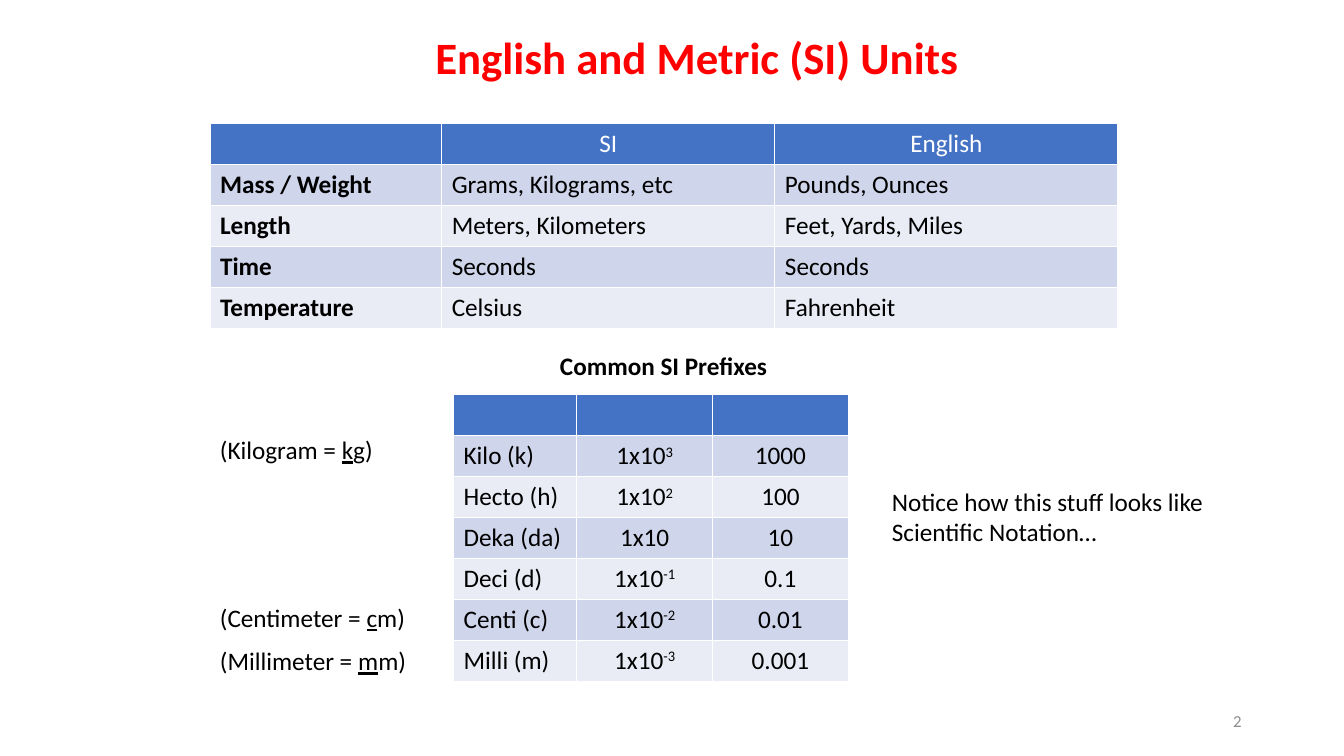
"""Build a slide comparing English and metric units, with the SI prefixes."""
from pptx import Presentation
from pptx.dml.color import RGBColor
from pptx.enum import text as t
from pptx.util import Pt

LEFT, MID, RIGHT = t.PP_ALIGN.LEFT, t.PP_ALIGN.CENTER, t.PP_ALIGN.RIGHT


def write(frame, words, align=LEFT, size=18, color="000000", bold=False):
    """Fill a frame; text between bars is underlined, between carets raised."""
    para = frame.paragraphs[0]
    para.alignment = align
    font = para.font
    font.name, font.size, font.bold = "Calibri", Pt(size), bold
    font.color.rgb = RGBColor.from_string(color)
    mark = "^" if "^" in words else "|"
    for i, part in enumerate(words.split(mark)):
        if part:
            run = para.add_run()
            run.text = part
            if i % 2 and mark == "|":
                run.font.underline = True
            elif i % 2:
                run.font._element.set("baseline", "30000")


def grid(rows, left, top, widths, aligns, lead):
    """Add a banded table with a blue header row."""
    high = 29.25
    table = slide.shapes.add_table(
        len(rows), len(widths), Pt(left), Pt(top),
        Pt(sum(widths)), Pt(high * len(rows))).table
    for col, width in zip(table.columns, widths):
        col.width = Pt(width)
    for r, row in enumerate(rows):
        table.rows[r].height = Pt(high)
        fill = "4472C4" if r == 0 else "CFD5EA" if r % 2 else "E9EBF5"
        for c, words in enumerate(row):
            cell = table.cell(r, c)
            cell.fill.solid()
            cell.fill.fore_color.rgb = RGBColor.from_string(fill)
            write(cell.text_frame, words, aligns[c] if r else MID,
                  color="000000" if r else "FFFFFF",
                  bold=lead and r > 0 and c == 0)


prs = Presentation()
prs.slide_width, prs.slide_height = Pt(960), Pt(540)
slide = prs.slides.add_slide(prs.slide_layouts[5])

title = slide.shapes.title
title.left, title.top, title.width, title.height = Pt(174), Pt(17.5), Pt(648), Pt(50)
title.text_frame.vertical_anchor = t.MSO_ANCHOR.MIDDLE
title.text_frame.paragraphs[0].line_spacing = 0.9
write(title.text_frame, "English and Metric (SI) Units", MID, 32, "FF0000", True)

units = [
    ("", "SI", "English"),
    ("Mass / Weight", "Grams, Kilograms, etc", "Pounds, Ounces"),
    ("Length", "Meters, Kilometers", "Feet, Yards, Miles"),
    ("Time", "Seconds", "Seconds"),
    ("Temperature", "Celsius", "Fahrenheit"),
]
grid(units, 150, 88.5, (165.5, 238, 245), (LEFT, LEFT, LEFT), True)

scale = [
    ("", "", ""),
    ("Kilo (k)", "1x10^3^", "1000"),
    ("Hecto (h)", "1x10^2^", "100"),
    ("Deka (da)", "1x10", "10"),
    ("Deci (d)", "1x10^-1^", "0.1"),
    ("Centi (c)", "1x10^-2^", "0.01"),
    ("Milli (m)", "1x10^-3^", "0.001"),
]
grid(scale, 324, 282, (88, 97, 97), (LEFT, MID, MID), False)

notes = [
    ("Notice how this stuff looks like Scientific Notation…",
     630, 343.5, 266, 51, {}),
    ("Common SI Prefixes", 366, 246.5, 216, 29, {"align": MID, "bold": True}),
    ("(Kilogram = |k|g)", 150, 307, 150, 29, {}),
    ("(Centimeter = |c|m)", 150, 426.5, 150, 29, {}),
    ("(Millimeter = |m|m)", 150, 457.5, 150, 29, {}),
    ("2", 678, 500.5, 216, 29, {"align": RIGHT, "size": 12, "color": "8C8C8C"}),
]
for words, left, top, width, high, style in notes:
    frame = slide.shapes.add_textbox(Pt(left), Pt(top), Pt(width), Pt(high)).text_frame
    frame.word_wrap = True
    if words == "2":
        frame.vertical_anchor = t.MSO_ANCHOR.MIDDLE
    write(frame, words, **style)

prs.save("out.pptx")
